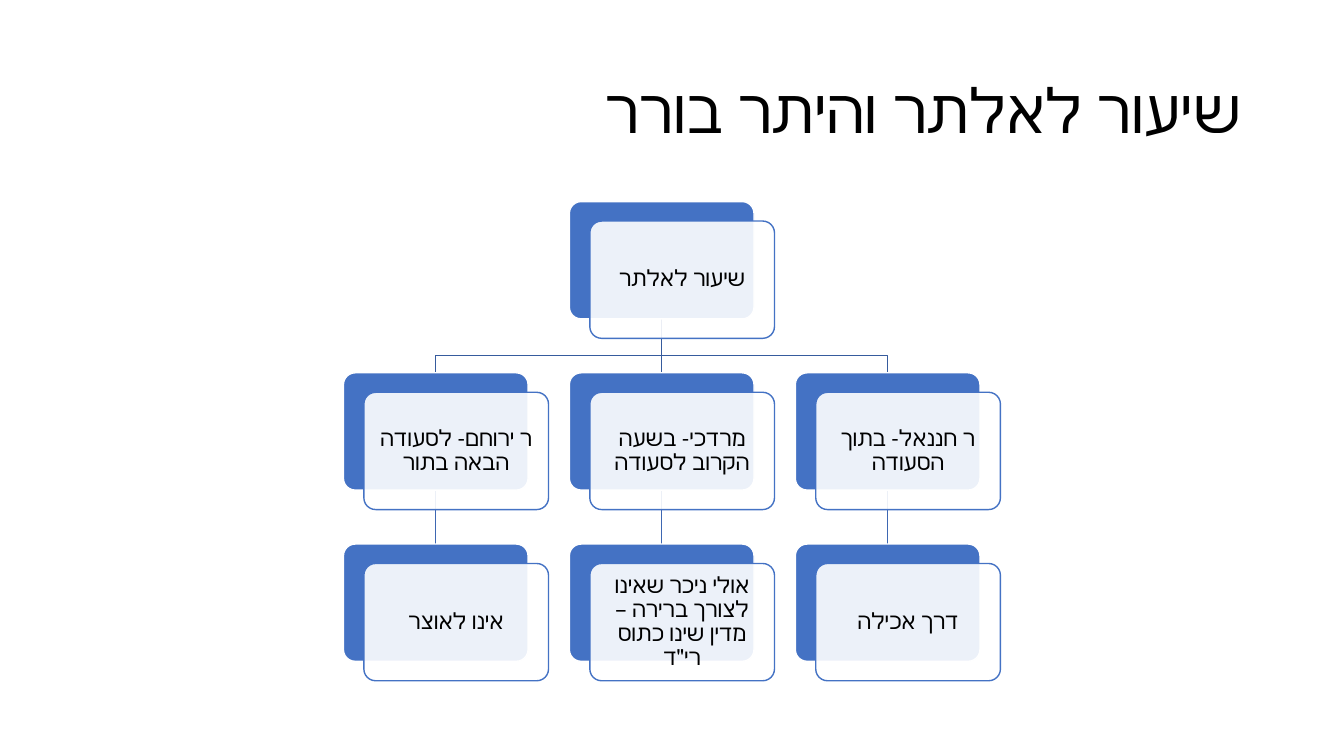
"""Build a Hebrew slide with a three-branch hierarchy under one root."""
from lxml.etree import SubElement
from pptx import Presentation
from pptx.dml.color import RGBColor
from pptx.enum.shapes import MSO_CONNECTOR, MSO_SHAPE
from pptx.enum.text import MSO_ANCHOR, PP_ALIGN
from pptx.oxml.ns import qn
from pptx.util import Pt

TITLE = "שיעור לאלתר והיתר בורר"
ROOT = "שיעור לאלתר"
BRANCHES = [
    ("ר ירוחם- לסעודה הבאה בתור", "אינו לאוצר"),
    ("מרדכי- בשעה הקרוב לסעודה", "אולי ניכר שאינו לצורך ברירה – מדין שינו כתוס רי\"ד"),
    ("ר חננאל- בתוך הסעודה", "דרך אכילה"),
]

FONT = "Calibri"
HEBREW_FONT = "+mn-cs"
BLUE = RGBColor(0x44, 0x72, 0xC4)
ROOT_LINE = RGBColor(0x36, 0x5B, 0x9D)
LEAF_LINE = RGBColor(0x3E, 0x67, 0xB2)
WHITE = RGBColor(0xFF, 0xFF, 0xFF)
BLACK = RGBColor(0, 0, 0)

LEFT, TOP = 245.3, 144
COL_STEP, ROW_STEP = 161.4, 122.3
BOX_W, BOX_H = 131.9, 83.75
SHIFT_X, SHIFT_Y = 14.6, 13.9
BEND_Y = 254
LINK_WIDTH = 0.75
MIDDLE = len(BRANCHES) // 2


def box_left(col):
    return LEFT + col * COL_STEP


def box_top(row):
    return TOP + row * ROW_STEP


def center(col):
    return box_left(col) + BOX_W / 2


def write(s, text, size, align):
    tf = s.text_frame
    tf.word_wrap = True
    tf.vertical_anchor = MSO_ANCHOR.MIDDLE
    tf.text = text
    p = tf.paragraphs[0]
    p.alignment = align
    p.line_spacing = 0.9
    r = p.runs[0]
    r.font.size = Pt(size)
    r.font.name = FONT
    r.font.color.rgb = BLACK
    SubElement(r.font._element, qn("a:cs")).set("typeface", HEBREW_FONT)
    return p


def add_link(shapes, color):
    link = shapes.add_connector(MSO_CONNECTOR.STRAIGHT, 0, 0, 0, 0)
    link.line.width = Pt(LINK_WIDTH)
    link.line.color.rgb = color
    SubElement(link._element.spPr, qn("a:effectLst"))
    return link


def add_elbow(shapes, col):
    start, end = center(MIDDLE), center(col)
    fb = shapes.build_freeform(Pt(start), Pt(TOP + BOX_H))
    points = [(start, BEND_Y), (end, BEND_Y), (end, box_top(1))]
    fb.add_line_segments([(Pt(x), Pt(y)) for x, y in points], close=False)
    s = fb.convert_to_shape()
    s.shadow.inherit = False
    s.fill.background()
    s.line.color.rgb = ROOT_LINE
    s.line.width = Pt(LINK_WIDTH)


def add_panel(shapes, x, y, fill, line):
    s = shapes.add_shape(MSO_SHAPE.ROUNDED_RECTANGLE, Pt(x), Pt(y), Pt(BOX_W), Pt(BOX_H))
    s.adjustments[0] = 0.1
    s.shadow.inherit = False
    s.fill.solid()
    s.fill.fore_color.rgb = fill
    s.line.color.rgb = line
    s.line.width = Pt(1)
    return s


def add_node(shapes, col, row, text):
    x, y = box_left(col), box_top(row)
    back = add_panel(shapes, x, y, BLUE, WHITE)
    front = add_panel(shapes, x + SHIFT_X, y + SHIFT_Y, WHITE, BLUE)
    color = front._element.spPr.find(qn("a:solidFill"))[0]
    SubElement(color, qn("a:alpha")).set("val", "90000")
    tf = front.text_frame
    tf.margin_left = tf.margin_right = tf.margin_top = tf.margin_bottom = Pt(4.8)
    write(front, text, 16, PP_ALIGN.CENTER)
    return back


def join(link, upper, lower):
    link.begin_connect(upper, 2)
    link.end_connect(lower, 0)


def main():
    prs = Presentation()
    prs.slide_width, prs.slide_height = Pt(960), Pt(540)
    shapes = prs.slides.add_slide(prs.slide_layouts[6]).shapes

    title = shapes.add_textbox(Pt(66), Pt(28.75), Pt(828), Pt(104.4))
    p = write(title, TITLE, 44, PP_ALIGN.RIGHT)
    p._p.get_or_add_pPr().set("rtl", "1")

    root_link = add_link(shapes, ROOT_LINE)
    leaf_links = [add_link(shapes, LEAF_LINE) for _ in BRANCHES]
    for col in range(len(BRANCHES)):
        if col != MIDDLE:
            add_elbow(shapes, col)

    root = add_node(shapes, MIDDLE, 0, ROOT)
    for col, (opinion, reason) in enumerate(BRANCHES):
        upper = add_node(shapes, col, 1, opinion)
        lower = add_node(shapes, col, 2, reason)
        join(leaf_links[col], upper, lower)
        if col == MIDDLE:
            join(root_link, root, upper)

    prs.save("out.pptx")


if __name__ == "__main__":
    main()
